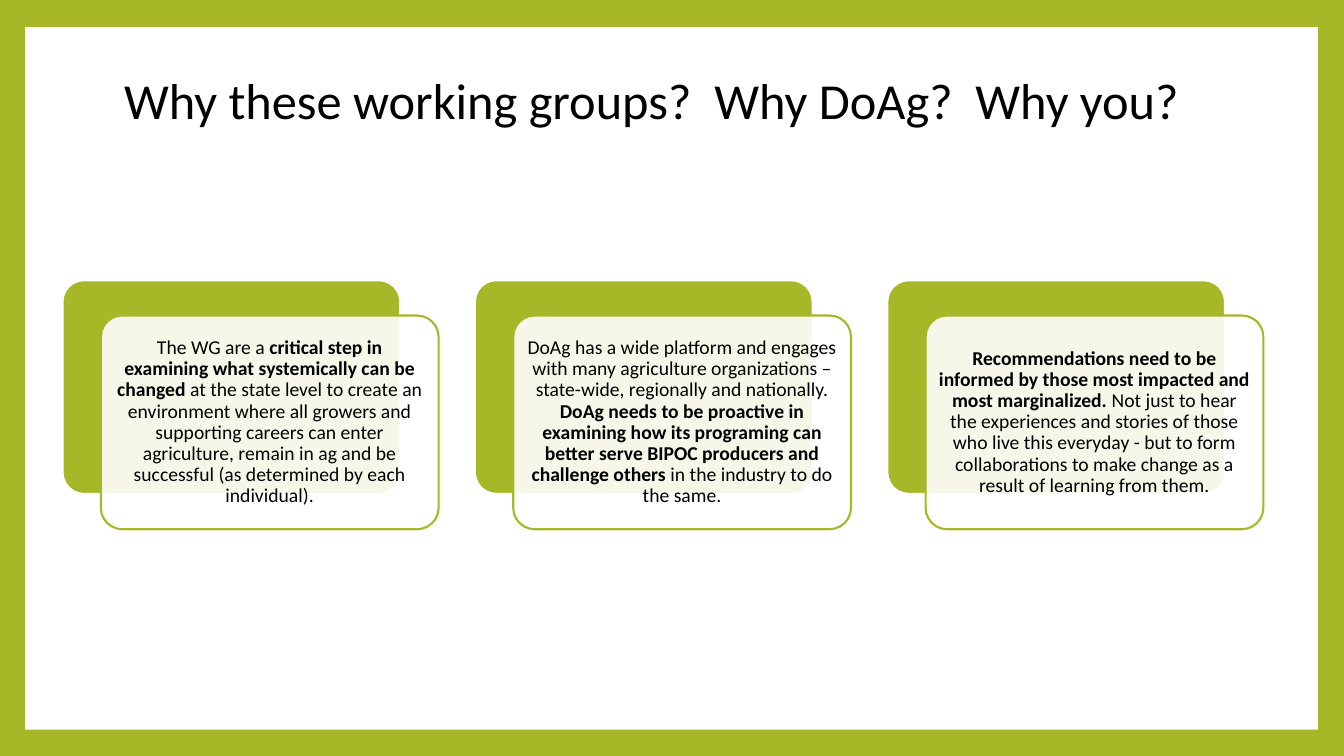
from lxml import etree
from pptx import Presentation
from pptx.dml.color import RGBColor
from pptx.enum.shapes import MSO_SHAPE
from pptx.enum.text import MSO_ANCHOR, MSO_AUTO_SIZE, PP_ALIGN
from pptx.oxml.ns import qn
from pptx.util import Inches, Pt

RECTANGLE, ROUNDED = MSO_SHAPE.RECTANGLE, MSO_SHAPE.ROUNDED_RECTANGLE
MIDDLE = MSO_ANCHOR.MIDDLE
NO_AUTOFIT = MSO_AUTO_SIZE.NONE
LEFT, CENTER = PP_ALIGN.LEFT, PP_ALIGN.CENTER

SLIDE_WIDTH, SLIDE_HEIGHT = 13.33, 7.5
GREEN, WHITE, BLACK = "A6B727", "FFFFFF", "000000"
FONT = "Calibri"
TITLE_ONLY = 5

ROW_LEFT, ROW_TOP = 0.62, 2.78
COLUMN_PITCH = 4.09
CARD_WIDTH, CARD_HEIGHT = 3.35, 2.12
OFFSET_X, OFFSET_Y = 0.38, 0.35
CARD_INSET = 0.12

REASONS = [
    [("The WG are a ", False),
     ("critical step in examining what systemically can be changed ", True),
     ("at the state level to create an environment where all growers and "
      "supporting careers can enter agriculture, remain in ag and be "
      "successful (as determined by each individual).", False)],
    [("DoAg has a wide platform and engages with many agriculture "
      "organizations – state-wide, regionally and nationally. ", False),
     ("DoAg needs to be proactive in examining how its programing can better "
      "serve BIPOC producers and challenge others", True),
     (" in the industry to do the same.", False)],
    [("Recommendations need to be informed by those most impacted and most "
      "marginalized.", True),
     (" Not just to hear the experiences and stories of those who live this "
      "everyday - but to form collaborations to make change as a result of "
      "learning from them.", False)],
]


def color(hex_code):
    """Return the colour for a hex string."""
    return RGBColor.from_string(hex_code)


def add_panel(slide, kind, box, fill, line=None, opacity=100):
    """Add a flat filled shape in the box, given in inches."""
    panel = slide.shapes.add_shape(kind, *map(Inches, box))
    panel.shadow.inherit = False
    panel.fill.solid()
    panel.fill.fore_color.rgb = color(fill)
    if opacity < 100:
        solid = panel.fill._xPr.find(qn("a:solidFill"))
        etree.SubElement(solid[0], qn("a:alpha"), val=str(opacity * 1000))
    if line:
        panel.line.color.rgb = color(line)
        panel.line.width = Pt(1.5)
    else:
        panel.line.fill.background()
    if kind == ROUNDED:
        panel.adjustments[0] = 0.1
    return panel


def style_paragraph(paragraph, size, alignment):
    """Apply the shared type style to a paragraph."""
    paragraph.alignment = alignment
    paragraph.line_spacing = 0.9
    paragraph.font.name = FONT
    paragraph.font.size = Pt(size)
    paragraph.font.color.rgb = color(BLACK)


def add_frame(slide, box):
    """Paint the green border and the white page behind everything."""
    slide.background.fill.solid()
    slide.background.fill.fore_color.rgb = color(GREEN)
    page = add_panel(slide, RECTANGLE, box, WHITE)
    slide.shapes._spTree.insert(2, page._element)


def fill_title(slide, box, wording):
    """Place and format the title placeholder in the box."""
    title = slide.shapes.title
    title.left, title.top, title.width, title.height = map(Inches, box)
    title.text_frame.text = wording
    title.text_frame.auto_size = NO_AUTOFIT
    title.text_frame.vertical_anchor = MIDDLE
    style_paragraph(title.text_frame.paragraphs[0], 36, LEFT)


def add_reason(slide, box, passages):
    """Add a green card with a text card shifted over it."""
    left, top, width, height = box
    add_panel(slide, ROUNDED, box, GREEN, WHITE)
    card = add_panel(slide, ROUNDED,
                     (left + OFFSET_X, top + OFFSET_Y, width, height),
                     WHITE, GREEN, 90)
    frame = card.text_frame
    frame.word_wrap = True
    frame.vertical_anchor = MIDDLE
    frame.margin_left = frame.margin_right = Inches(CARD_INSET - 0.06)
    frame.margin_top = frame.margin_bottom = Inches(CARD_INSET)
    paragraph = frame.paragraphs[0]
    style_paragraph(paragraph, 14, CENTER)
    for wording, bold in passages:
        run = paragraph.add_run()
        run.text = wording
        run.font.bold = bold


def main():
    """Build and save the slide."""
    deck = Presentation()
    deck.slide_width, deck.slide_height = Inches(SLIDE_WIDTH), Inches(SLIDE_HEIGHT)
    slide = deck.slides.add_slide(deck.slide_layouts[TITLE_ONLY])
    add_frame(slide, (0.25, 0.27, 12.82, 6.97))
    fill_title(slide, (1.13, 0, 11.29, 2.04),
               "Why these working groups?  Why DoAg?  Why you?")
    for column, passages in enumerate(REASONS):
        left = ROW_LEFT + column * COLUMN_PITCH
        add_reason(slide, (left, ROW_TOP, CARD_WIDTH, CARD_HEIGHT), passages)
    deck.save("out.pptx")


if __name__ == "__main__":
    main()
